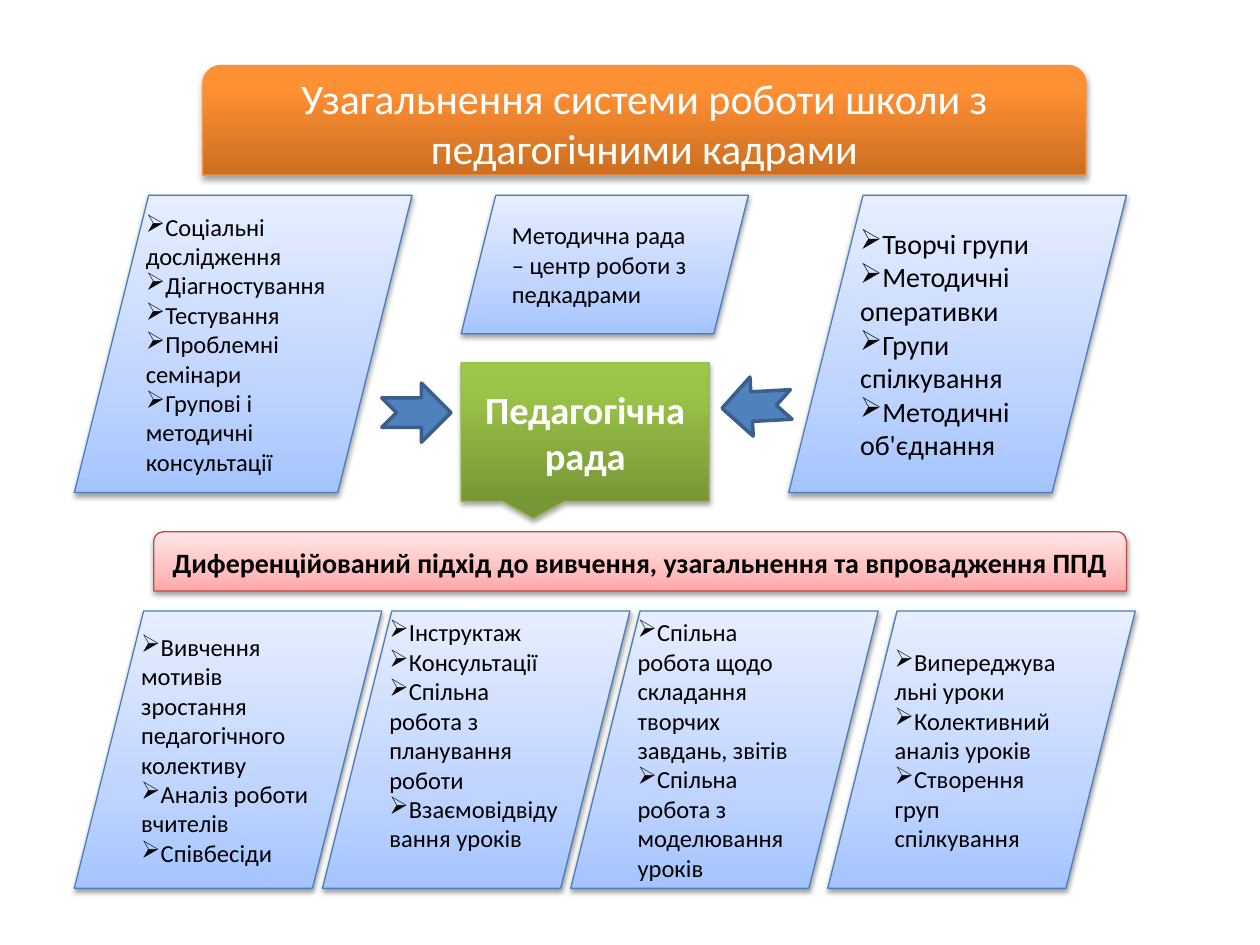
from copy import deepcopy

from lxml.etree import SubElement
from pptx import Presentation
from pptx.dml.color import RGBColor
from pptx.enum.shapes import MSO_SHAPE
from pptx.enum.text import MSO_ANCHOR, PP_ALIGN
from pptx.oxml.ns import qn
from pptx.util import Inches, Pt

COLORS = {"white": "FFFFFF", "black": "000000", "arrow": "4F81BD", "arrow_line": "3A5F8C"}
STRONG_SHADOW = (35, 1.8)
SOFT_SHADOW = (38, 1.6)
STYLES = {
    "orange": {"stops": [(0, "CC6E20"), (0.8, "FF9034"), (1, "FF9136")],
               "line": "F69240", "text": "white", "shadow": STRONG_SHADOW},
    "green": {"stops": [(0, "779737"), (0.8, "9BC348"), (1, "9DC746")],
              "line": "98B955", "text": "white", "shadow": STRONG_SHADOW},
    "blue": {"stops": [(0, "A4C4FF"), (0.35, "BFD4FF"), (1, "E6EEFF")],
             "line": "4B7EBC", "text": "black", "shadow": SOFT_SHADOW},
    "pink": {"stops": [(0, "FFA6A5"), (0.35, "FFC0BF"), (1, "FFE7E7")],
             "line": "BF4C48", "text": "black", "shadow": SOFT_SHADOW},
}

TITLE = "Узагальнення системи роботи школи з педагогічними кадрами"
COUNCIL = "Педагогічна рада"
CENTRE = "Методична рада – центр роботи з педкадрами"
APPROACH = "Диференційований підхід до вивчення, узагальнення та впровадження ППД"
SIDE_PANELS = [
    (0.59, 14, ["Соціальні дослідження", "Діагностування", "Тестування",
                "Проблемні семінари", "Групові і методичні консультації"]),
    (6.26, 16, ["Творчі групи", "Методичні оперативки", "Групи спілкування",
                "Методичні об'єднання"]),
]
LOWER_PANELS = [
    (0.59, 0.05, ["Вивчення мотивів зростання педагогічного колективу",
                  "Аналіз роботи вчителів", "Співбесіди"]),
    (2.56, 0.28, ["Інструктаж", "Консультації", "Спільна робота з планування роботи",
                  "Взаємовідвідування уроків"]),
    (4.53, 0.05, ["Спільна робота щодо складання творчих завдань, звітів",
                  "Спільна робота з моделювання уроків"]),
    (6.57, 0.05, ["Випереджувальні уроки", "Колективний аналіз уроків",
                  "Створення груп спілкування"]),
]
ARROWS = [(3.03, 3.04, 0), (5.73, 2.99, 176.8)]


def add_shape(page, preset, place, line_color, line_width):
    shape = page.shapes.add_shape(preset, *[Inches(value) for value in place])
    shape.shadow.inherit = False
    shape.line.color.rgb = RGBColor.from_string(line_color)
    shape.line.width = Pt(line_width)
    return shape


def fill_gradient(shape, stops):
    shape.fill.gradient()
    shape.fill.gradient_angle = 90
    stop_list = shape._element.spPr.find(qn("a:gradFill")).find(qn("a:gsLst"))
    stop_list.append(deepcopy(stop_list[-1]))
    for stop, (position, color) in zip(shape.fill.gradient_stops, stops):
        stop.position = position
        stop.color.rgb = RGBColor.from_string(color)


def add_shadow(shape, opacity, distance):
    effects = shape._element.spPr.find(qn("a:effectLst"))
    shadow = SubElement(effects, qn("a:outerShdw"), blurRad=str(Pt(3.1)),
                        dist=str(Pt(distance)), dir="5400000", rotWithShape="0")
    color = SubElement(shadow, qn("a:srgbClr"), val=COLORS["black"])
    SubElement(color, qn("a:alpha"), val=str(opacity * 1000))


def add_panel(page, preset, place, style_name, lines, size,
              bold=False, bullets=False, centred=False, bottom=0.05):
    style = STYLES[style_name]
    panel = add_shape(page, preset, place, style["line"], 0.75)
    fill_gradient(panel, style["stops"])
    add_shadow(panel, *style["shadow"])
    frame = panel.text_frame
    frame.word_wrap = True
    frame.vertical_anchor = MSO_ANCHOR.MIDDLE
    frame.margin_bottom = Inches(bottom)
    for number, line in enumerate(lines):
        paragraph = frame.add_paragraph() if number else frame.paragraphs[0]
        paragraph.text = line
        paragraph.alignment = PP_ALIGN.CENTER if centred else PP_ALIGN.LEFT
        if bullets:
            SubElement(paragraph._p.get_or_add_pPr(), qn("a:buChar"), char="➢")
        font = paragraph.font
        font.name = "Calibri"
        font.size = Pt(size)
        font.bold = bold
        font.color.rgb = RGBColor.from_string(COLORS[style["text"]])


def main():
    deck = Presentation()
    deck.slide_width, deck.slide_height = Inches(10), Inches(7.5)
    page = deck.slides.add_slide(deck.slide_layouts[6])

    add_panel(page, MSO_SHAPE.ROUND_2_SAME_RECTANGLE, (1.61, 0.52, 7.01, 0.87),
              "orange", [TITLE], 24, centred=True)
    add_panel(page, MSO_SHAPE.RECTANGULAR_CALLOUT, (3.66, 2.88, 1.97, 1.1),
              "green", [COUNCIL], 22, bold=True, centred=True)
    add_panel(page, MSO_SHAPE.PARALLELOGRAM, (3.66, 1.55, 2.28, 1.1),
              "blue", [CENTRE], 14)
    for left, size, lines in SIDE_PANELS:
        add_panel(page, MSO_SHAPE.PARALLELOGRAM, (left, 1.55, 2.68, 2.36),
                  "blue", lines, size, bullets=True)

    for left, top, rotation in ARROWS:
        arrow = add_shape(page, MSO_SHAPE.NOTCHED_RIGHT_ARROW, (left, top, 0.55, 0.47),
                          COLORS["arrow_line"], 2)
        arrow.fill.solid()
        arrow.fill.fore_color.rgb = RGBColor.from_string(COLORS["arrow"])
        arrow.rotation = rotation

    add_panel(page, MSO_SHAPE.ROUND_2_SAME_RECTANGLE, (1.22, 4.22, 7.72, 0.47),
              "pink", [APPROACH], 16, bold=True, centred=True)
    for left, bottom, lines in LOWER_PANELS:
        add_panel(page, MSO_SHAPE.PARALLELOGRAM, (left, 4.85, 2.44, 2.2),
                  "blue", lines, 14, bullets=True, bottom=bottom)

    deck.save("out.pptx")


if __name__ == "__main__":
    main()
